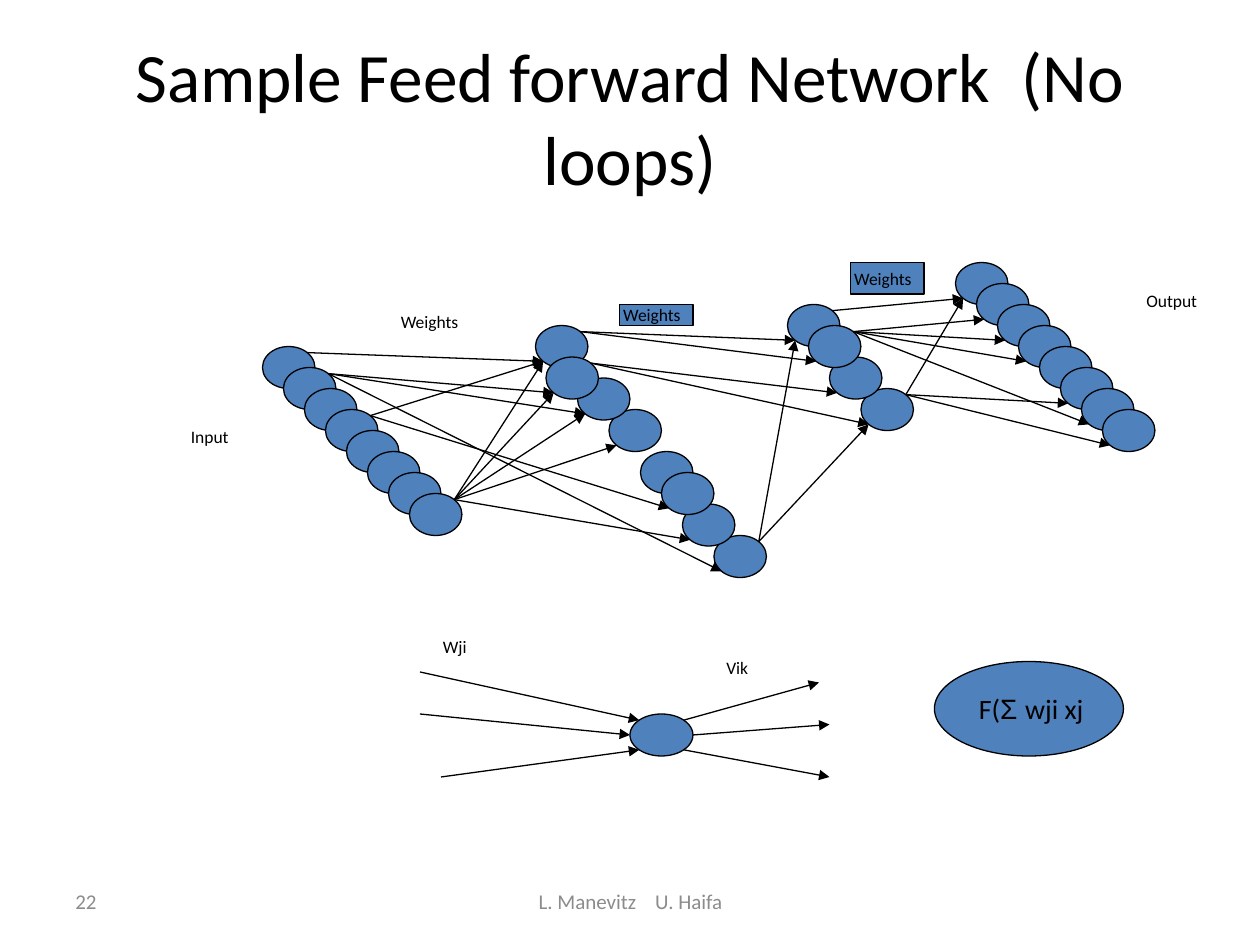
"""Build a slide showing a layered feed forward network and a single unit."""
import math

import lxml.etree
import pptx
import pptx.dml.color
import pptx.enum.shapes
import pptx.enum.text
import pptx.oxml.ns
import pptx.util

Inches = pptx.util.Inches
Align = pptx.enum.text.PP_ALIGN
Anchor = pptx.enum.text.MSO_ANCHOR
Shape = pptx.enum.shapes.MSO_SHAPE

BLACK = pptx.dml.color.RGBColor(0x00, 0x00, 0x00)
GRAY = pptx.dml.color.RGBColor(0x8C, 0x8C, 0x8C)
BLUE = pptx.dml.color.RGBColor(0x4F, 0x81, 0xBD)

NEURON_SIZE = (5, 4)
INPUT_LAYER = [(25 + 2 * i, 33 + 2 * i) for i in range(8)]
FIRST_HIDDEN_LAYER = [(58, 39), (51, 31), (55, 36), (52, 34),
                      (68, 51), (61, 43), (65, 48), (63, 45)]
SECOND_HIDDEN_LAYER = [(82, 37), (75, 29), (79, 34), (77, 31)]
OUTPUT_LAYER = [(91 + 2 * i, 25 + 2 * i) for i in range(8)]
LAYERS = [INPUT_LAYER, FIRST_HIDDEN_LAYER, SECOND_HIDDEN_LAYER, OUTPUT_LAYER]

LAYER_LINKS = [
    [(0, 1), (1, 3), (1, 2), (1, 4), (7, 3), (7, 1),
     (7, 2), (7, 0), (7, 6), (3, 1), (3, 7)],
    [(1, 1), (1, 3), (3, 2), (3, 0), (4, 1), (4, 0)],
    [(1, 0), (3, 1), (3, 2), (3, 3), (3, 6), (0, 7), (0, 5), (0, 0)],
]

UNIT = (60, 68)
UNIT_SIZE = (6, 4)
UNIT_INPUTS = [(135, (40, 64)), (180, (40, 68)), (225, (42, 74))]
UNIT_OUTPUTS = [(45, (78, 65)), (0, (79, 69)), (315, (79, 74))]

LABELS = [("Weights", 37, 29, 11), ("Input", 17, 40, 9), ("Output", 108, 27, 12),
          ("Wji", 41, 60, 8), ("Vik", 68, 62, 7)]


def grid(*steps):
    """Turn grid steps of a twelfth of an inch into lengths."""
    return [Inches(step / 12) for step in steps]


def rim_point(position, size, degrees):
    """Return the point on an ellipse rim, counted anticlockwise from the right."""
    (left, top), (width, height) = position, size
    angle = math.radians(degrees)
    return (left + width / 2 * (1 + math.cos(angle)),
            top + height / 2 * (1 - math.sin(angle)))


def write_text(shape, text, size=10, font="Calibri", color=BLACK,
               align=Align.LEFT, anchor=Anchor.TOP, wrap=True):
    """Append a formatted run to the first paragraph of a shape."""
    frame = shape.text_frame
    frame.word_wrap = wrap
    frame.vertical_anchor = anchor
    paragraph = frame.paragraphs[0]
    paragraph.alignment = align
    run = paragraph.add_run()
    run.text = text
    run.font.size = pptx.util.Pt(size)
    run.font.name = font
    run.font.color.rgb = color


class NetworkSlide:
    """Hold the drawing style and the current slide."""

    fill = BLUE
    line = BLACK
    line_width = pptx.util.Pt(0.75)

    def __init__(self, slide):
        """Keep the slide that receives the elements."""
        self.shapes = slide.shapes

    def text(self, text, left, top, width, height, **style):
        """Add a text box."""
        box = self.shapes.add_textbox(left, top, width, height)
        write_text(box, text, **style)

    def shape(self, kind, left, top, width, height):
        """Add a filled and outlined shape placed in grid steps."""
        shape = self.shapes.add_shape(kind, *grid(left, top, width, height))
        shape.shadow.inherit = False
        shape.fill.solid()
        shape.fill.fore_color.rgb = self.fill
        shape.line.color.rgb = self.line
        shape.line.width = self.line_width
        return shape

    def layer(self, positions):
        """Add one layer of neurons."""
        for position in positions:
            self.shape(Shape.OVAL, *position, *NEURON_SIZE)

    def tag(self, text, left, top, width, height):
        """Add a filled rectangle with a short label."""
        shape = self.shape(Shape.RECTANGLE, left, top, width, height)
        write_text(shape, text, align=Align.RIGHT, anchor=Anchor.MIDDLE, wrap=False)

    def arrow(self, start, end):
        """Add an arrow between two grid points."""
        kind = pptx.enum.shapes.MSO_CONNECTOR.STRAIGHT
        connector = self.shapes.add_connector(kind, *grid(*start, *end))
        connector.line.color.rgb = self.line
        connector.line.width = self.line_width
        qn = pptx.oxml.ns.qn
        outline = connector.line._get_or_add_ln()
        lxml.etree.SubElement(outline, qn("a:tailEnd"), type="triangle")
        lxml.etree.SubElement(connector._element.spPr, qn("a:effectLst"))

    def link(self, source, target):
        """Add an arrow from the rim of one neuron to the rim of another."""
        self.arrow(rim_point(source, NEURON_SIZE, 45),
                   rim_point(target, NEURON_SIZE, 225))

    def unit(self):
        """Add the single unit with its incoming and outgoing arrows."""
        self.shape(Shape.OVAL, *UNIT, *UNIT_SIZE)
        for degrees, start in UNIT_INPUTS:
            self.arrow(start, rim_point(UNIT, UNIT_SIZE, degrees))
        for degrees, end in UNIT_OUTPUTS:
            self.arrow(rim_point(UNIT, UNIT_SIZE, degrees), end)

    def formula(self, pieces, left, top, width, height):
        """Add an ellipse whose text mixes fonts."""
        shape = self.shape(Shape.OVAL, left, top, width, height)
        for text, font in pieces:
            write_text(shape, text, size=16, font=font, align=Align.RIGHT,
                       anchor=Anchor.MIDDLE, wrap=False)


def main():
    """Create the presentation and save it."""
    presentation = pptx.Presentation()
    presentation.slide_width = Inches(10)
    presentation.slide_height = Inches(7.5)
    network = NetworkSlide(presentation.slides.add_slide(presentation.slide_layouts[6]))

    footer = {"size": 12, "color": GRAY, "anchor": Anchor.MIDDLE}
    network.text("L. Manevitz    U. Haifa", Inches(3.42), Inches(6.95),
                 Inches(3.17), Inches(0.4), align=Align.CENTER, **footer)
    network.text("22", Inches(0.5), Inches(6.95), Inches(2.33), Inches(0.4), **footer)
    network.text("Sample Feed forward Network  (No loops)", Inches(0.5), Inches(0.3),
                 Inches(9), Inches(1.25), size=39.6, align=Align.CENTER,
                 anchor=Anchor.MIDDLE)

    for layer in LAYERS:
        network.layer(layer)
    for sources, targets, links in zip(LAYERS, LAYERS[1:], LAYER_LINKS):
        for source, target in links:
            network.link(sources[source], targets[target])
    network.unit()

    for text, left, top, width in LABELS:
        network.text(text, *grid(left, top, width), Inches(0.27))
    network.tag("Weights", 59, 29, 7, 2)
    network.tag("Weights", 81, 25, 7, 3)
    network.formula([("F(", "Calibri"), ("Σ ", "Arial"), ("wji xj", "Calibri")],
                    89, 63, 18, 9)

    presentation.save("out.pptx")


if __name__ == "__main__":
    main()
